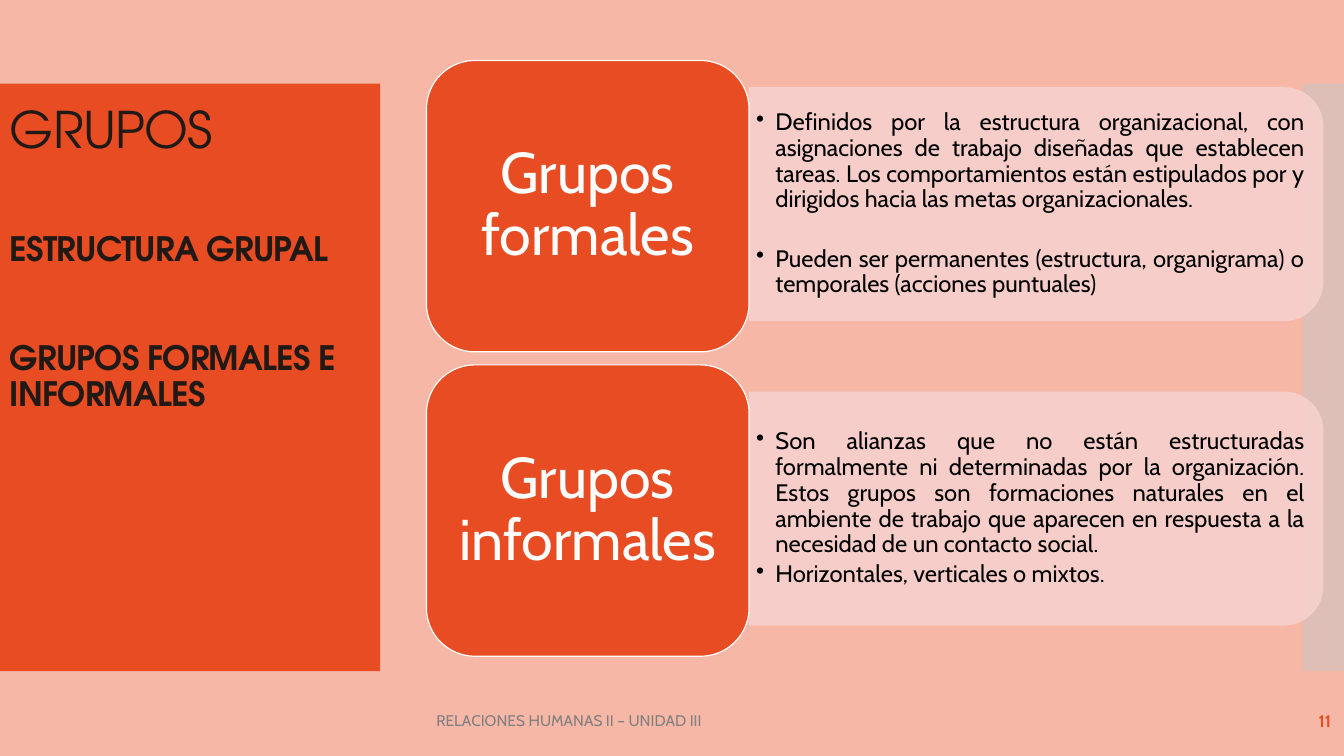
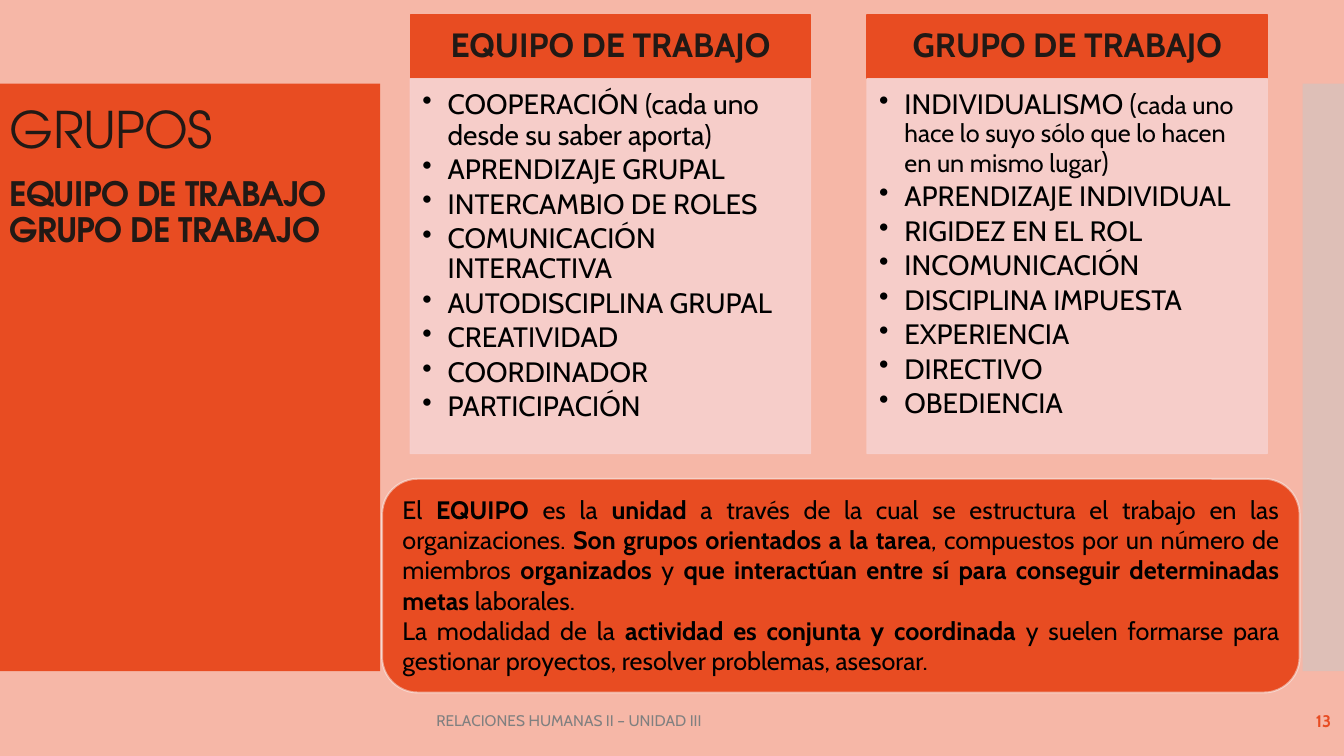
from pptx import Presentation
from pptx.dml.color import RGBColor
from pptx.enum.shapes import MSO_SHAPE
from pptx.enum.text import MSO_ANCHOR, PP_ALIGN
from pptx.oxml.ns import qn
from pptx.util import Emu, Pt
from lxml.etree import SubElement

SCALE = 9144
ORANGE, PEACH, PINK = "E84C22", "F6B7A7", "F6D0CD"
DARK, BLACK, WHITE = "211915", "000000", "FFFFFF"
GREY, SILVER, PALE = "808080", "C8C8C8", "F9F9F9"
BODY, HEAD = "Cabin", "TeX Gyre Adventor"
LEFT, RIGHT = PP_ALIGN.LEFT, PP_ALIGN.RIGHT
MID, FULL = PP_ALIGN.CENTER, PP_ALIGN.JUSTIFY
BOLD = {"bold": True}
NEXT = (0,) + (3,) * 7


def px(size):
    return Emu(size * SCALE)


def paint(fill, tint, alpha=100):
    fill.solid()
    fill.fore_color.rgb = RGBColor.from_string(tint)
    if alpha < 100:
        for node in fill.fore_color._xFill.iter(qn("a:srgbClr")):
            SubElement(node, qn("a:alpha")).set("val", str(alpha * 1000))


def style(run, size, tint, font, bold=False, track=0):
    run.font.size = Pt(size)
    run.font.name = font
    run.font.bold = bold
    paint(run.font.fill, tint)
    if track:
        run.font._element.set("spc", str(track))


def put(shape, text, align=LEFT, top=False, pad=(10, 5, 10, 5), lead=1.0,
        gaps=(0,) * 9, dot=0, alt=BOLD, size=18, tint=BLACK, font=BODY, **more):
    frame = shape.text_frame
    frame.word_wrap = True
    frame.vertical_anchor = MSO_ANCHOR.TOP if top else MSO_ANCHOR.MIDDLE
    (frame.margin_left, frame.margin_top,
     frame.margin_right, frame.margin_bottom) = map(px, pad)
    base = {"size": size, "tint": tint, "font": font, **more}
    for i, (line, gap) in enumerate(zip(text.split("\n"), gaps)):
        par = frame.add_paragraph() if i else frame.paragraphs[0]
        par.alignment = align
        par.line_spacing = lead
        par.space_before = Pt(gap)
        if dot:
            prop = par._p.get_or_add_pPr()
            prop.set("marL", str(px(dot)))
            prop.set("indent", str(px(-dot)))
            SubElement(prop, qn("a:buChar")).set("char", "•")
        for j, part in enumerate(line.split("*")):
            if part:
                run = par.add_run()
                run.text = part
                style(run, **(base | alt if j % 2 else base))


class Deck:
    def __init__(self):
        self.show = Presentation()
        self.show.slide_width = px(1333)
        self.show.slide_height = px(750)
        self.slide = None

    def page(self, num, title, gaps):
        self.slide = self.show.slides.add_slide(self.show.slide_layouts[6])
        paint(self.slide.background.fill, PEACH)
        self.box((0, 83, 377, 583), ORANGE)
        self.box((1292, 83, 42, 583), SILVER, alpha=50)
        self.text((423, 695, 646, 40), "RELACIONES HUMANAS II – UNIDAD III",
                  size=11, tint=GREY)
        self.text((1163, 695, 167, 40), num, align=RIGHT, size=12,
                  tint=ORANGE, bold=True)
        self.text((0, 99, 342, 473), title, top=True, lead=0.9, gaps=gaps,
                  alt={"size": 24, "bold": True}, size=36, tint=DARK,
                  font=HEAD, track=-60)

    def box(self, area, tint, edge=None, kind=MSO_SHAPE.RECTANGLE,
            alpha=100, clear=100, width=0.85):
        shape = self.slide.shapes.add_shape(kind, *map(px, area))
        shape.shadow.inherit = False
        paint(shape.fill, tint, alpha)
        if edge:
            paint(shape.line.fill, edge, clear)
            shape.line.width = Pt(width)
        else:
            shape.line.fill.background()
        return shape

    def text(self, area, words, **form):
        put(self.slide.shapes.add_textbox(*map(px, area)), words, **form)

    def group(self, y, name, facts, gaps=NEXT):
        x, wide, high = 743, 569, 231
        shift = (wide - high) // 2
        tab = self.box((x + shift, y + 27 - shift, high, wide), PINK, PINK,
                       MSO_SHAPE.ROUND_2_SAME_RECTANGLE, 90, 90)
        tab.rotation = 90
        self.text((x, y + 38, 558, 209), facts, align=FULL, pad=(7, 4, 7, 4),
                  lead=0.9, gaps=gaps, dot=19, size=17)
        card = self.box((423, y, 320, 289), ORANGE, WHITE,
                        MSO_SHAPE.ROUNDED_RECTANGLE)
        put(card, name, align=MID, pad=(17, 9, 17, 9), lead=0.9, size=41,
            tint=WHITE)

    def column(self, x, name, traits):
        head = self.box((x, 15, 397, 63), ORANGE, ORANGE)
        put(head, name, align=MID, pad=(19, 11, 19, 11), lead=0.9, size=24,
            tint=DARK, bold=True)
        body = self.box((x, 78, 397, 372), PINK, PINK, alpha=90, clear=90)
        put(body, traits, top=True, pad=(12, 12, 16, 17), lead=0.9, gaps=NEXT,
            dot=25, alt={"size": 18}, size=20)

    def panel(self, area, words):
        shape = self.box(area, ORANGE, PALE, MSO_SHAPE.ROUNDED_RECTANGLE,
                         clear=50, width=1.35)
        put(shape, words, align=FULL, top=True)


def main():
    deck = Deck()
    deck.page("11", "GRUPOS\n*ESTRUCTURA GRUPAL\n*GRUPOS FORMALES E INFORMALES",
              (0, 52, 52))
    deck.group(60, "Grupos formales",
               "Definidos por la estructura organizacional, con asignaciones de "
               "trabajo diseñadas que establecen tareas. Los comportamientos "
               "están estipulados por y dirigidos hacia las metas "
               "organizacionales.\n"
               "Pueden ser permanentes (estructura, organigrama) o temporales "
               "(acciones puntuales)", (0, 24))
    deck.group(362, "Grupos informales",
               "Son alianzas que no están estructuradas formalmente ni "
               "determinadas por la organización. Estos grupos son formaciones "
               "naturales en el ambiente de trabajo que aparecen en respuesta a "
               "la necesidad de un contacto social.\n"
               "Horizontales, verticales o mixtos.")

    deck.page("13", "GRUPOS\n*EQUIPO DE TRABAJO\n*GRUPO DE TRABAJO", (0, 13, 0))
    deck.column(407, "EQUIPO DE TRABAJO",
                "COOPERACIÓN (cada uno desde su saber aporta)\n"
                "APRENDIZAJE GRUPAL\nINTERCAMBIO DE ROLES\n"
                "COMUNICACIÓN INTERACTIVA\nAUTODISCIPLINA GRUPAL\n"
                "CREATIVIDAD\nCOORDINADOR\nPARTICIPACIÓN")
    deck.column(860, "GRUPO DE TRABAJO",
                "INDIVIDUALISMO (*cada uno hace lo suyo sólo que lo hacen en un "
                "mismo lugar*)\n"
                "APRENDIZAJE INDIVIDUAL\nRIGIDEZ EN EL ROL\nINCOMUNICACIÓN\n"
                "DISCIPLINA IMPUESTA\nEXPERIENCIA\nDIRECTIVO\nOBEDIENCIA")
    deck.panel((379, 475, 910, 212),
               "El *EQUIPO* es la *unidad* a través de la cual se estructura el "
               "trabajo en las organizaciones. *Son grupos orientados a la "
               "tarea*, compuestos por un número de miembros *organizados* y "
               "*que interactúan entre sí para conseguir determinadas metas* "
               "laborales.\n"
               "La modalidad de la *actividad es conjunta y coordinada* y suelen "
               "formarse para gestionar proyectos, resolver problemas, asesorar.")
    deck.show.save("out.pptx")


if __name__ == "__main__":
    main()
